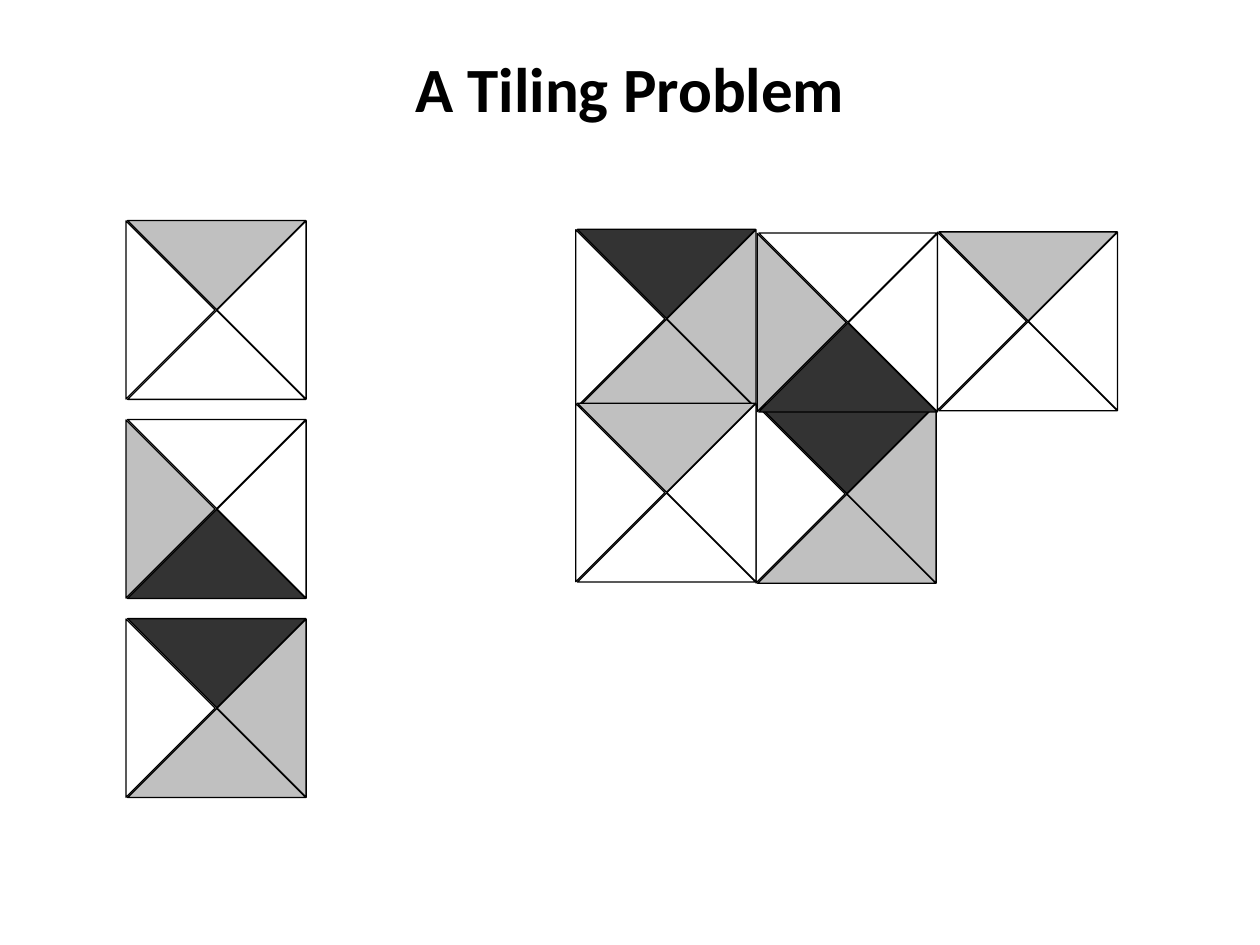
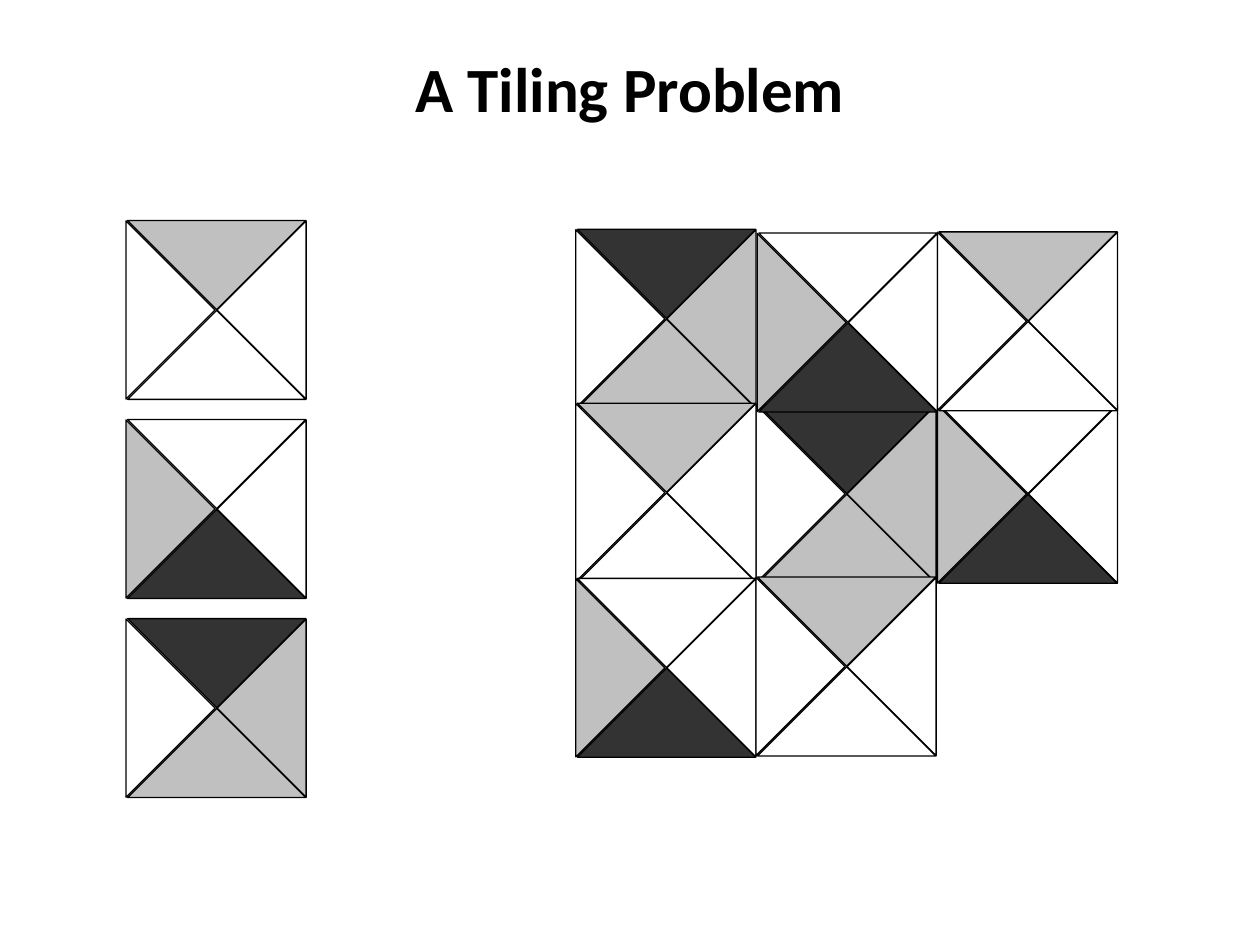
from dataclasses import dataclass

from pptx import Presentation
from pptx.dml.color import RGBColor
from pptx.enum.shapes import MSO_SHAPE
from pptx.enum.text import MSO_ANCHOR, PP_ALIGN
from pptx.util import Pt

TRIANGLE = MSO_SHAPE.RIGHT_TRIANGLE
MIDDLE = MSO_ANCHOR.MIDDLE
CENTER = PP_ALIGN.CENTER
EMU_PER_PX = 9144


@dataclass(frozen=True)
class Theme:
    white: RGBColor = RGBColor(0xFF, 0xFF, 0xFF)
    grey: RGBColor = RGBColor(0xC0, 0xC0, 0xC0)
    dark: RGBColor = RGBColor(0x33, 0x33, 0x33)
    ink: RGBColor = RGBColor(0x00, 0x00, 0x00)
    font: str = "Calibri"
    title_size: Pt = Pt(36)
    outline: Pt = Pt(0.75)


THEME = Theme()
SLIDE_SIZE = (1000, 750)
TITLE_BOX = (50, 30, 900, 78)
TRIANGLE_SIDE = 100

# side: dx and dy from the left triangle, rotation, mirrored
SIDES = {
    "left": (0, 0, 225, False),
    "right": (143, 0, 135, True),
    "bottom": (72, 71, 225, True),
    "top": (72, -71, 45, True),
}

TILE_COLOURS = {
    "A": {"left": THEME.white, "right": THEME.white,
          "bottom": THEME.white, "top": THEME.grey},
    "B": {"left": THEME.grey, "right": THEME.white,
          "bottom": THEME.dark, "top": THEME.white},
    "C": {"left": THEME.white, "right": THEME.grey,
          "bottom": THEME.grey, "top": THEME.dark},
}

STACK = "CBA"
STACK_LEFT, STACK_BOTTOM, STACK_STEP = 50, 512, 158

# step at which the tile is laid, tile kind, x, y
BOARD = [
    (1, "C", 550, 342),
    (1, "C", 407, 203),
    (1, "B", 551, 206),
    (2, "B", 694, 342),
    (1, "A", 407, 341),
    (2, "B", 407, 480),
    (2, "A", 550, 479),
    (1, "A", 694, 205),
]


def px(*lengths):
    return [length * EMU_PER_PX for length in lengths]


def add_title(slide, wording):
    title = slide.shapes.add_textbox(*px(*TITLE_BOX))
    frame = title.text_frame
    frame.word_wrap = True
    frame.vertical_anchor = MIDDLE
    heading = frame.paragraphs[0]
    heading.alignment = CENTER
    words = heading.add_run()
    words.text = wording
    styles = {"name": THEME.font, "size": THEME.title_size, "bold": True}
    for attribute, value in styles.items():
        setattr(words.font, attribute, value)
    words.font.color.rgb = THEME.ink


def add_triangle(tile, x, y, rotation, mirrored, colour):
    triangle = tile.shapes.add_shape(
        TRIANGLE, *px(x, y, TRIANGLE_SIDE, TRIANGLE_SIDE))
    triangle.rotation = rotation
    if mirrored:
        triangle.element.spPr.xfrm.set("flipH", "1")
    triangle.shadow.inherit = False
    triangle.fill.solid()
    triangle.fill.fore_color.rgb = colour
    triangle.line.color.rgb = THEME.ink
    triangle.line.width = THEME.outline


def add_tile(slide, kind, x, y):
    tile = slide.shapes.add_group_shape()
    for side, (dx, dy, rotation, mirrored) in SIDES.items():
        add_triangle(tile, x + dx, y + dy, rotation, mirrored,
                     TILE_COLOURS[kind][side])


def add_tiling_slide(deck, step):
    slide = deck.slides.add_slide(deck.slide_layouts[6])
    add_title(slide, "A Tiling Problem")
    for laid_at, kind, x, y in BOARD:
        if laid_at <= step:
            add_tile(slide, kind, x, y)
    for level, kind in enumerate(STACK):
        add_tile(slide, kind, STACK_LEFT, STACK_BOTTOM - level * STACK_STEP)


def main():
    deck = Presentation()
    deck.slide_width, deck.slide_height = px(*SLIDE_SIZE)
    for step in (1, 2):
        add_tiling_slide(deck, step)
    deck.save("out.pptx")


if __name__ == "__main__":
    main()
